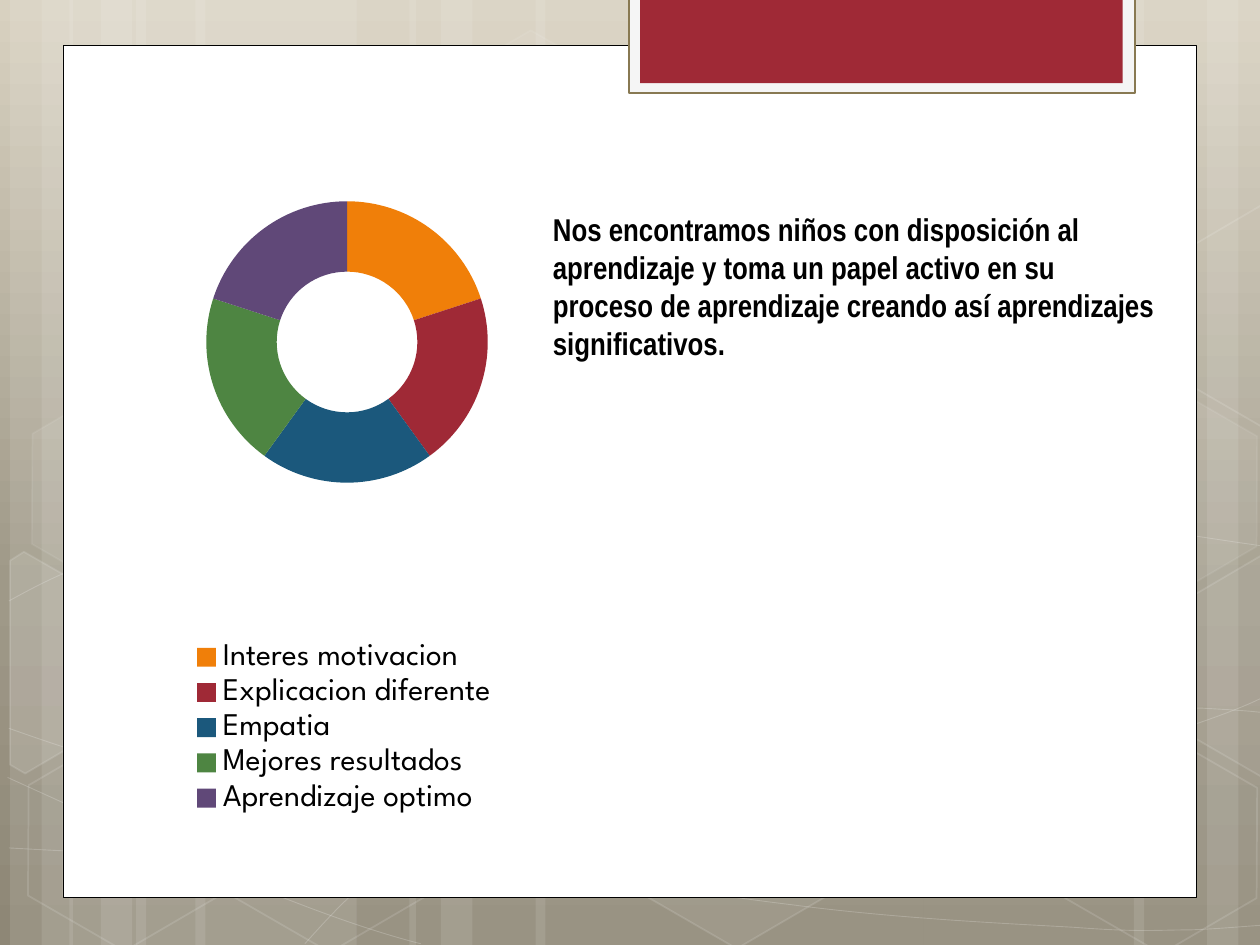
from copy import deepcopy

from lxml import etree
from pptx import Presentation
from pptx.chart.data import CategoryChartData
from pptx.dml.color import RGBColor
from pptx.enum.chart import XL_CHART_TYPE, XL_LEGEND_POSITION
from pptx.enum.shapes import MSO_SHAPE
from pptx.enum.text import MSO_AUTO_SIZE
from pptx.oxml.ns import qn
from pptx.util import Inches, Pt

DOUGHNUT = XL_CHART_TYPE.DOUGHNUT
BOTTOM = XL_LEGEND_POSITION.BOTTOM
RECTANGLE = MSO_SHAPE.RECTANGLE
HEXAGON = MSO_SHAPE.HEXAGON
FIT_SHAPE = MSO_AUTO_SIZE.SHAPE_TO_FIT_TEXT

COLORS = {
    "sky": "D8D1C0", "middle": "9F9988", "ground": "8E8776",
    "white": "FFFFFF", "black": "000000",
    "tab": "F5F5F5", "tab_edge": "887952",
    "orange": "F07F09", "red": "9F2936", "blue": "1B587C",
    "green": "4E8542", "purple": "604878",
}
BACKDROP = [(0, "sky"), (0.62, "middle"), (1, "ground")]
STRIPES = [
    (1.08, 1.75), (0.08, 0.5), (0.33, 0.83), (1.55, 1.75), (0.55, 0.5), (0.8, 0.83),
    (7.33, 1.75), (9.58, 0.5), (9, 0.83), (4.25, 3.08), (3.25, 0.5), (3.5, 0.83),
]
CURVES = [
    [(0.07, 6.73), (0.61, 6.76), (1.15, 6.79), (1.9, 6.78), (2.65, 6.77), (3.58, 6.75),
     (4.58, 6.65), (5.58, 6.55), (7, 6.36), (7.92, 6.17), (8.83, 5.98), (9.77, 5.68),
     (10.07, 5.51)],
    [(0.07, 4.77), (0.36, 4.61), (0.65, 4.46), (1.21, 4.31), (1.78, 4.16), (2.59, 3.94),
     (3.47, 3.87), (4.36, 3.8), (5.44, 3.79), (6.54, 3.87), (7.64, 3.95), (9.47, 4.26),
     (10.07, 4.34)],
    [(0.06, 6.17), (1.27, 6.72), (2.47, 7.27), (3.34, 7.49)],
    [(0.07, 5.78), (0.38, 5.89), (0.7, 6), (1.28, 6.16), (1.86, 6.31), (2.73, 6.56),
     (3.57, 6.73), (4.4, 6.9), (5.45, 7.08), (6.28, 7.18), (7.11, 7.29), (8, 7.33),
     (8.53, 7.36), (9.05, 7.4), (9.19, 7.38), (9.45, 7.38), (9.71, 7.37), (9.89, 7.35),
     (10.07, 7.34)],
    [(2.42, 7.49), (2.6, 7.29), (2.78, 7.09), (3.02, 6.91), (3.26, 6.73), (3.6, 6.53),
     (3.88, 6.39), (4.16, 6.25), (4.33, 6.19), (4.7, 6.09), (5.06, 5.99), (5.73, 5.85),
     (6.08, 5.78), (6.44, 5.71), (6.49, 5.71), (6.8, 5.69), (7.11, 5.66), (7.6, 5.63),
     (7.94, 5.62), (8.29, 5.61), (8.86, 5.62), (8.86, 5.62), (9.08, 5.62), (9.31, 5.62),
     (9.53, 5.62), (9.71, 5.63), (9.88, 5.64), (9.97, 5.65), (10.06, 5.66), (10.03, 5.65),
     (10.06, 5.66)],
]
HEXAGONS = [
    (3.34, 0.36, 4, 8), (4.97, 5.89, 6, 12), (0.11, 5.91, 0, 12),
    (0.14, 3.12, 7, 8), (1.74, 5.92, 0, 12), (7.53, 4.53, 10, 12),
    (8.34, 5.93, 0, 12), (8.34, 3.14, 7, 8),
]
CUT_HEXAGONS = [
    ([(0.08, 4.45), (0.19, 4.38), (0.96, 4.82), (0.95, 5.7), (0.2, 6.14), (0.08, 6.07)], 10),
    ([(9.26, 4.85), (10.01, 4.41), (10.09, 4.46), (10.09, 6.13), (10.02, 6.17), (9.26, 5.73)], 4),
    ([(9.26, 2.07), (10.01, 1.63), (10.1, 1.68), (10.09, 3.35), (10.02, 3.39), (9.26, 2.95)], 0),
]
SLICES = [
    ("Interes motivacion ", "orange"), ("Explicacion diferente ", "red"),
    ("Empatia ", "blue"), ("Mejores resultados ", "green"), ("Aprendizaje optimo ", "purple"),
]
MESSAGE = ("Nos encontramos niños con disposición al aprendizaje y toma un papel activo "
           "en su proceso de aprendizaje creando así aprendizajes significativos.")


def color(name):
    return RGBColor.from_string(COLORS[name])


def paint(fill, name, opacity=100):
    if not opacity:
        fill.background()
        return
    fill.solid()
    fill.fore_color.rgb = color(name)


def set_opacity(shape, fill_opacity, line_opacity):
    for query, opacity in (("./p:spPr/a:solidFill/a:srgbClr", fill_opacity),
                           ("./p:spPr/a:ln/a:solidFill/a:srgbClr", line_opacity)):
        if opacity < 100:
            for node in shape.element.xpath(query):
                etree.SubElement(node, qn("a:alpha")).set("val", str(opacity * 1000))


def style(shape, fill="white", fill_opacity=100, line="white", line_opacity=100, width=0):
    shape.shadow.inherit = False
    paint(shape.fill, fill, fill_opacity)
    paint(shape.line.fill, line, line_opacity if width else 0)
    if width:
        shape.line.width = Pt(width)
    set_opacity(shape, fill_opacity, line_opacity)


def add_box(page, kind, box):
    return page.shapes.add_shape(kind, *map(Inches, box))


def add_outline(page, points, close):
    corners = [(Inches(x), Inches(y)) for x, y in points]
    builder = page.shapes.build_freeform(*corners[0], scale=1.0)
    builder.add_line_segments(corners[1:], close=close)
    return builder.convert_to_shape()


def add_curve(page, knots):
    curve = add_outline(page, knots, False)
    segments = curve.element.xpath(".//a:lnTo")
    for first in range(0, len(segments), 3):
        bend = etree.Element(qn("a:cubicBezTo"))
        segments[first].addprevious(bend)
        for segment in segments[first:first + 3]:
            bend.append(segment[0])
            segment.getparent().remove(segment)
    return curve


def add_backdrop(page, height):
    fill = page.background.fill
    fill.gradient()
    fill.gradient_angle = 270
    stop_list = page.element.xpath(".//p:bg//a:gsLst")[0]
    stop_list.append(deepcopy(stop_list[-1]))
    for stop, (position, name) in zip(fill.gradient_stops, BACKDROP):
        stop.position = position
        stop.color.rgb = color(name)
    for left, width in STRIPES:
        style(add_box(page, RECTANGLE, (left, 0, width, height)), fill_opacity=10)
    for knots in CURVES:
        style(add_curve(page, knots), fill_opacity=0, line_opacity=20, width=0.5)
    for left, top, fill_opacity, line_opacity in HEXAGONS:
        hexagon = add_box(page, HEXAGON, (left, top, 1.75, 1.52))
        hexagon.adjustments[0] = 0.285
        hexagon.adjustments[1] = 1.155
        hexagon.rotation = 30
        style(hexagon, fill_opacity=fill_opacity, line_opacity=line_opacity, width=1)
    for points, fill_opacity in CUT_HEXAGONS:
        style(add_outline(page, points, True),
              fill_opacity=fill_opacity, line_opacity=12, width=1)


def add_card(page, box):
    left, top, width, _ = box
    style(add_box(page, RECTANGLE, box), line="black", width=0.5)
    tab_left = left + width - 4.51
    style(add_box(page, RECTANGLE, (tab_left, top - 0.38, 4.02, 0.76)),
          fill="tab", line="tab_edge", width=1.25)
    style(add_box(page, RECTANGLE, (tab_left + 0.09, top - 0.38, 3.83, 0.68)), fill="red")


def place_plot(chart, box, plot_box):
    left, top, width, height = box
    plot_left, plot_top, plot_width, plot_height = plot_box
    area = chart.element.xpath(".//c:plotArea")[0]
    for old in area.findall(qn("c:layout")):
        area.remove(old)
    layout = etree.Element(qn("c:layout"))
    area.insert(0, layout)
    manual = etree.SubElement(layout, qn("c:manualLayout"))
    for tag, value in (
        ("layoutTarget", "inner"), ("xMode", "edge"), ("yMode", "edge"),
        ("x", (plot_left - left) / width), ("y", (plot_top - top) / height),
        ("w", plot_width / width), ("h", plot_height / height),
    ):
        etree.SubElement(manual, qn(f"c:{tag}")).set("val", str(value))


def add_ring_chart(page, box):
    data = CategoryChartData()
    data.categories = [label for label, _ in SLICES]
    data.add_series("Series 1", [20] * len(SLICES))
    data.add_series("Series 2", [None] * len(SLICES))
    chart = page.shapes.add_chart(DOUGHNUT, *map(Inches, box), data).chart
    chart.has_title = False
    chart.font.size = Pt(18)
    chart.font.name = "League Spartan"
    chart.font.color.rgb = color("black")
    chart.has_legend = True
    chart.legend.position = BOTTOM
    chart.legend.include_in_layout = False
    plot = chart.plots[0]
    plot.vary_by_categories = True
    plot.has_data_labels = False
    for series in plot.series:
        for index, (_, name) in enumerate(SLICES):
            paint(series.points[index].format.fill, name)
    for first_point in chart.element.xpath(".//c:ser/c:dPt[1]"):
        explosion = etree.Element(qn("c:explosion"))
        explosion.set("val", "25")
        first_point.addprevious(explosion)
    place_plot(chart, box, (0.94, 0.9, 3.63, 3.63))


def add_message(page, box):
    frame = page.shapes.add_textbox(*map(Inches, box)).text_frame
    frame.word_wrap = True
    frame.auto_size = FIT_SHAPE
    para = frame.paragraphs[0]
    para.text = MESSAGE
    para.font.name = "Arial Narrow"
    para.font.size = Pt(18)
    para.font.bold = True
    para.font.color.rgb = color("black")


def main():
    deck = Presentation()
    deck.slide_width = Inches(10)
    deck.slide_height = Inches(7.5)
    page = deck.slides.add_slide(deck.slide_layouts[6])
    add_backdrop(page, 7.5)
    add_card(page, (0.5, 0.36, 9, 6.76))
    add_ring_chart(page, (0.28, 0.44, 4.96, 6.06))
    add_message(page, (4.29, 1.62, 5, 1.31))
    deck.save("out.pptx")


if __name__ == "__main__":
    main()
